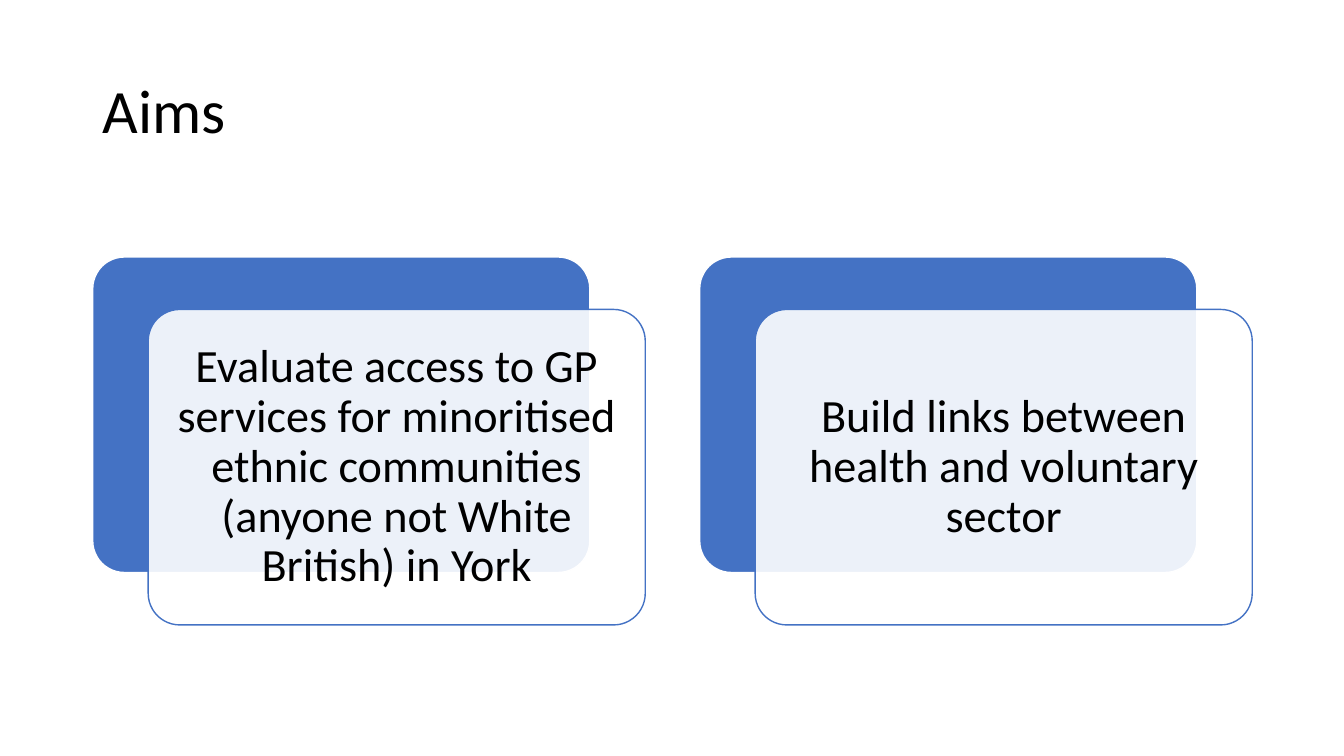
from lxml import etree
from pptx import Presentation
from pptx.dml.color import RGBColor
from pptx.enum.shapes import MSO_SHAPE
from pptx.enum.text import MSO_ANCHOR, PP_ALIGN
from pptx.oxml.ns import qn
from pptx.util import Inches, Pt

ROUNDED = MSO_SHAPE.ROUNDED_RECTANGLE
MIDDLE = MSO_ANCHOR.MIDDLE
LEFT, CENTER = PP_ALIGN.LEFT, PP_ALIGN.CENTER

WIDTH, HEIGHT = 13.33, 7.5
MARGIN = 0.92
CONTENT_W = 11.5
BLUE, WHITE, BLACK = "4472C4", "FFFFFF", "000000"
AIMS = [
    "Evaluate access to GP services for minoritised ethnic communities "
    "(anyone not White British) in York",
    "Build links between health and voluntary sector",
]


def rgb(color):
    return RGBColor.from_string(color)


def add_text(s, box, text, size, align, inset_x, inset_y):
    tf = s.shapes.add_textbox(*map(Inches, box)).text_frame
    tf.word_wrap = True
    tf.vertical_anchor = MIDDLE
    tf.margin_left = tf.margin_right = Inches(inset_x)
    tf.margin_top = tf.margin_bottom = Inches(inset_y)
    p = tf.paragraphs[0]
    p.alignment = align
    p.line_spacing = 0.9
    r = p.add_run()
    r.text = text
    r.font.name = "Calibri"
    r.font.size = Pt(size)
    r.font.color.rgb = rgb(BLACK)


def add_panel(s, box, fill, line, opacity=100):
    sp = s.shapes.add_shape(ROUNDED, *map(Inches, box))
    sp.shadow.inherit = False
    sp.adjustments[0] = 0.1
    sp.fill.solid()
    sp.fill.fore_color.rgb = rgb(fill)
    sp.line.color.rgb = rgb(line)
    sp.line.width = Pt(1)
    if opacity < 100:
        color = sp._element.spPr.find(qn("a:solidFill"))[0]
        etree.SubElement(color, qn("a:alpha"), val=str(opacity * 1000))


def add_title(s, box, text):
    add_text(s, box, text, 44, LEFT, 0.1, 0.05)


def add_aim_card(s, box, text):
    x, y, w, h = box
    dx, dy, pad = 0.55, 0.52, 0.09
    panel_w, panel_h = w - dx, h - dy
    add_panel(s, (x, y, panel_w, panel_h), BLUE, WHITE)
    add_panel(s, (x + dx, y + dy, panel_w, panel_h), WHITE, BLUE, 90)
    text_box = (x + dx + pad, y + dy + pad,
                panel_w - 2 * pad, panel_h - 2 * pad)
    add_text(s, text_box, text, 33, CENTER, 0.14, 0.14)


def add_aims(s, box, aims, gap):
    x, y, w, h = box
    card_w = (w - gap * (len(aims) - 1)) / len(aims)
    for i, aim in enumerate(aims):
        add_aim_card(s, (x + i * (card_w + gap), y, card_w, h), aim)


def main():
    prs = Presentation()
    prs.slide_width = Inches(WIDTH)
    prs.slide_height = Inches(HEIGHT)
    s = prs.slides.add_slide(prs.slide_layouts[6])
    add_title(s, (MARGIN, 0.4, CONTENT_W, 1.45), "Aims")
    add_aims(s, (MARGIN, 2.55, CONTENT_W, 3.65), AIMS, 0.54)
    prs.save("out.pptx")


if __name__ == "__main__":
    main()
